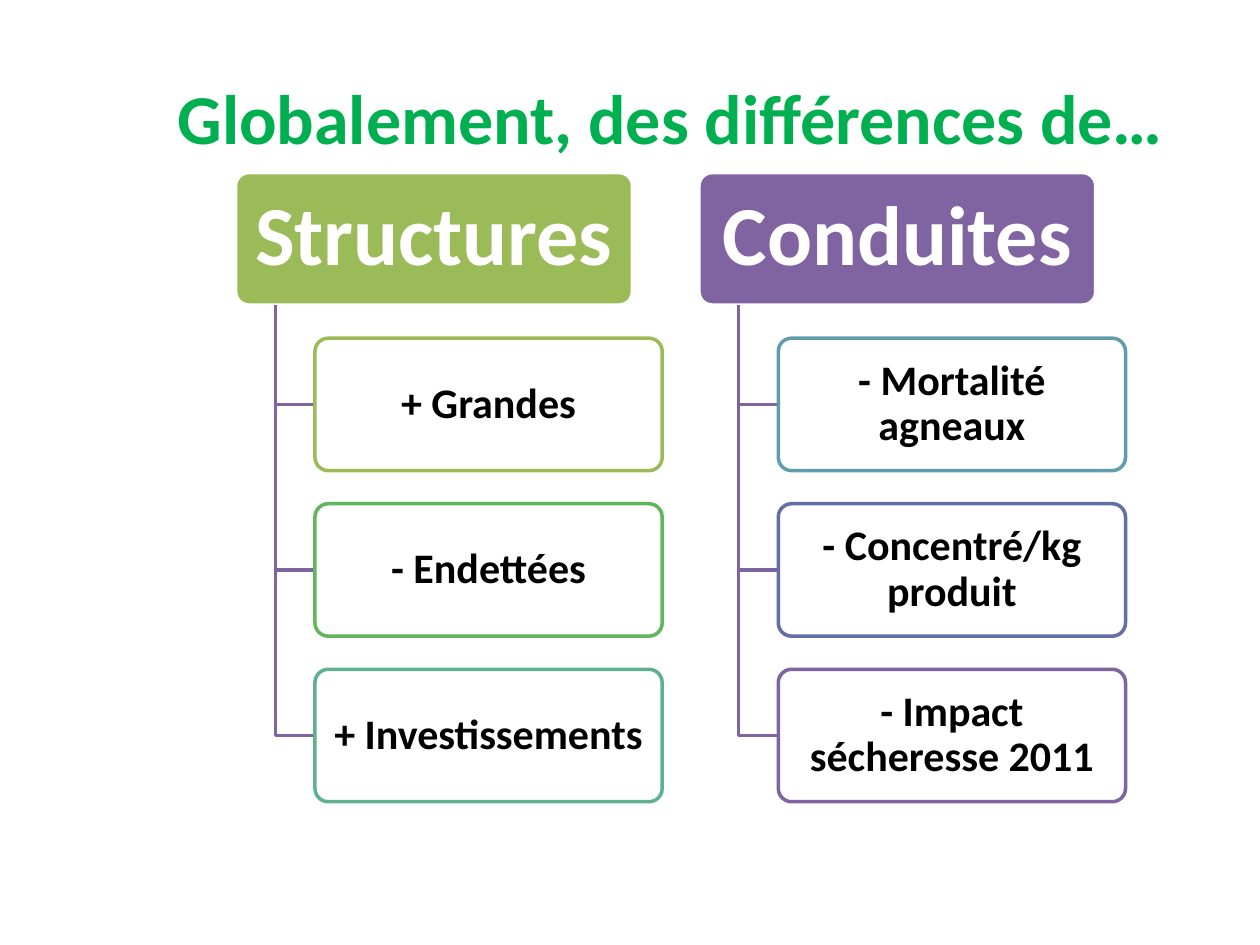
import pptx
import pptx.dml.color
import pptx.enum.shapes
import pptx.enum.text
import pptx.oxml.ns
import pptx.util
from lxml import etree

Cm = pptx.util.Cm
Pt = pptx.util.Pt


def rgb(value):
    return pptx.dml.color.RGBColor.from_string(value)


class Deck:
    """Holds the style and the current slide, and draws each kind of element."""

    font = "Calibri"
    white = "FFFFFF"
    black = "000000"
    branch = "8064A2"
    line_width = 2

    def __init__(self, prs):
        self.s = prs.slides.add_slide(prs.slide_layouts[6])

    def label(self, sp, text, size, color, margins, spacing=1.0):
        tf = sp.text_frame
        tf.word_wrap = True
        tf.vertical_anchor = pptx.enum.text.MSO_ANCHOR.MIDDLE
        tf.margin_left = tf.margin_right = Cm(margins[0])
        tf.margin_top = tf.margin_bottom = Cm(margins[1])
        p = tf.paragraphs[0]
        p.alignment = pptx.enum.text.PP_ALIGN.CENTER
        p.line_spacing = spacing
        r = p.add_run()
        r.text = text
        r.font.name = self.font
        r.font.size = Pt(size)
        r.font.bold = True
        r.font.color.rgb = rgb(color)

    def title(self, text, color, x, y, w, h):
        sp = self.s.shapes.add_textbox(Cm(x), Cm(y), Cm(w), Cm(h))
        self.label(sp, text, 40, color, (0.25, 0.13))

    def box(self, x, y, w, h, fill, line, alpha=None):
        sp = self.s.shapes.add_shape(
            pptx.enum.shapes.MSO_SHAPE.ROUNDED_RECTANGLE, Cm(x), Cm(y), Cm(w), Cm(h))
        sp.adjustments[0] = 0.1
        sp.shadow.inherit = False
        sp.fill.solid()
        sp.fill.fore_color.rgb = rgb(fill)
        if alpha is not None:
            clr = sp.element.spPr.find(".//" + pptx.oxml.ns.qn("a:srgbClr"))
            etree.SubElement(clr, pptx.oxml.ns.qn("a:alpha"), val=str(alpha * 1000))
        sp.line.color.rgb = rgb(line)
        sp.line.width = Pt(self.line_width)
        return sp

    def header(self, text, color, x, y, w, h):
        sp = self.box(x, y, w, h, color, self.white)
        self.label(sp, text, 48, self.white, (0.25, 0.18), 0.9)

    def item(self, text, color, x, y, w, h):
        sp = self.box(x, y, w, h, self.white, color, alpha=90)
        self.label(sp, text, 24, self.black, (0.13, 0.08), 0.9)

    def elbow(self, x1, y1, x2, y2):
        fb = self.s.shapes.build_freeform(Cm(x1), Cm(y1))
        fb.add_line_segments([(Cm(x1), Cm(y2)), (Cm(x2), Cm(y2))], close=False)
        sp = fb.convert_to_shape()
        sp.shadow.inherit = False
        sp.fill.background()
        sp.line.color.rgb = rgb(self.branch)
        sp.line.width = Pt(self.line_width)


def main():
    prs = pptx.Presentation()
    prs.slide_width, prs.slide_height = Cm(25.4), Cm(19.05)
    deck = Deck(prs)
    deck.title("Globalement, des différences de…", "00B050", 2.9, 0.76, 21.23, 3.18)

    columns = [
        ("Structures", "9BBB59", [
            ("+ Grandes", "9BBB59"),
            ("- Endettées", "5FB65B"),
            ("+ Investissements", "5DB18E")]),
        ("Conduites", "8064A2", [
            ("- Mortalité agneaux", "5F9DAC"),
            ("- Concentré/kg produit", "626EA7"),
            ("- Impact sécheresse 2011", "8064A2")]),
    ]
    left, top, col_step = 4.75, 3.48, 9.34
    head_w, item_w, h = 8, 7, 2.67
    row_step = h * 1.25
    for c, (heading, color, items) in enumerate(columns):
        x = left + c * col_step
        deck.header(heading, color, x, top, head_w, h)
        for i, (text, line) in enumerate(items, 1):
            y = top + i * row_step
            deck.elbow(x + 0.8, top + h, x + 1.6, y + h / 2)
            deck.item(text, line, x + 1.6, y, item_w, h)
    prs.save("out.pptx")


if __name__ == "__main__":
    main()
